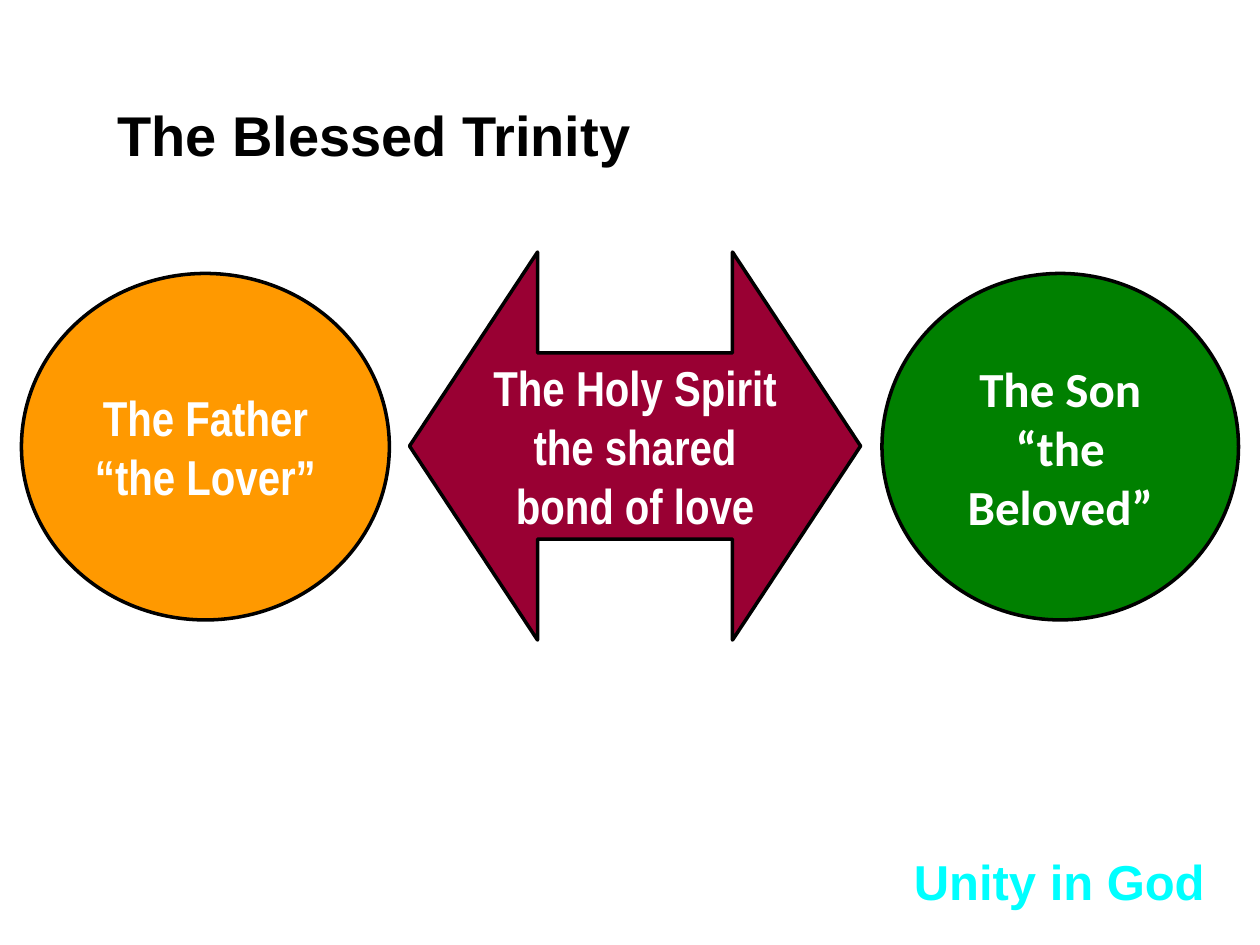
from pptx import Presentation
from pptx.dml.color import RGBColor
from pptx.enum import shapes, text
from pptx.util import Inches, Pt

HUES = {"ink": "000000", "paper": "FFFFFF", "father": "FF9900",
        "son": "008000", "spirit": "990033", "unity": "00FFFF"}
KINDS = shapes.MSO_SHAPE
ALIGN = text.PP_ALIGN


class Deck:
    def __init__(self):
        self.prs = Presentation()
        self.prs.slide_width = Inches(10)
        self.prs.slide_height = Inches(7.5)
        self.slide = self.prs.slides.add_slide(self.prs.slide_layouts[5])

    def hue(self, name):
        return RGBColor.from_string(HUES[name])

    def letter(self, shape, words, hue, size=28, font="Arial",
               align=ALIGN.CENTER, anchor=text.MSO_ANCHOR.MIDDLE):
        """Put styled words into a shape."""
        frame = shape.text_frame
        frame.text = words
        frame.word_wrap = True
        frame.auto_size = text.MSO_AUTO_SIZE.NONE
        frame.vertical_anchor = anchor
        for para in frame.paragraphs:
            para.alignment = align
            for run in para.runs:
                run.font.name = font
                run.font.size = Pt(size)
                run.font.bold = True
                run.font.color.rgb = self.hue(hue)

    def title(self, words, left, top, width, height):
        box = self.slide.shapes.title
        box.left, box.top = Inches(left), Inches(top)
        box.width, box.height = Inches(width), Inches(height)
        self.letter(box, words, "ink", 32, align=ALIGN.LEFT,
                    anchor=text.MSO_ANCHOR.TOP)

    def label(self, words, hue, *place):
        box = self.slide.shapes.add_textbox(*map(Inches, place))
        self.letter(box, words, hue, align=ALIGN.RIGHT,
                    anchor=text.MSO_ANCHOR.TOP)

    def figure(self, kind, words, hue, font, *place):
        shape = self.slide.shapes.add_shape(kind, *map(Inches, place))
        shape.shadow.inherit = False
        shape.fill.solid()
        shape.fill.fore_color.rgb = self.hue(hue)
        shape.line.color.rgb = self.hue("ink")
        shape.line.width = Pt(2)
        self.letter(shape, words, "paper", font=font)
        return shape


def main():
    deck = Deck()
    deck.label("Unity in God", "unity", 2.58, 6.71, 7.08, 0.88)
    deck.title("The Blessed Trinity", 0.83, 0.75, 8.5, 0.64)
    deck.figure(KINDS.OVAL, "The Father\n“the Lover”", "father",
                "Arial Narrow", 0.17, 2.17, 2.92, 2.75)
    deck.figure(KINDS.OVAL, "The Son\n“the Beloved”", "son",
                "Calibri", 7, 2.17, 2.83, 2.75)
    arrow = deck.figure(KINDS.LEFT_RIGHT_ARROW,
                        "The Holy Spirit the shared bond of love", "spirit",
                        "Arial Narrow", 3.25, 2, 3.58, 3.08)
    arrow.adjustments[0] = 0.48
    arrow.adjustments[1] = 0.33
    deck.prs.save("out.pptx")


if __name__ == "__main__":
    main()
